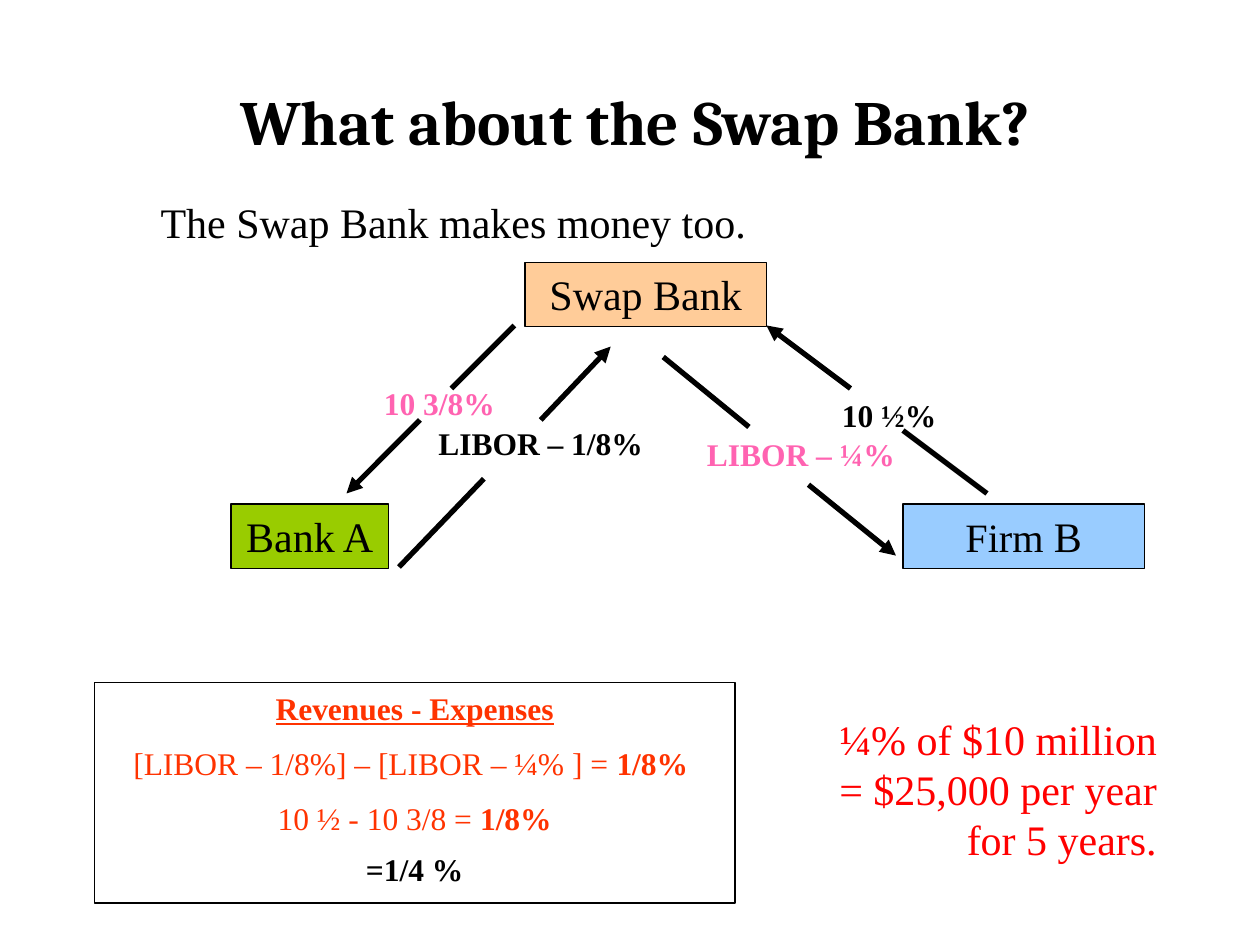
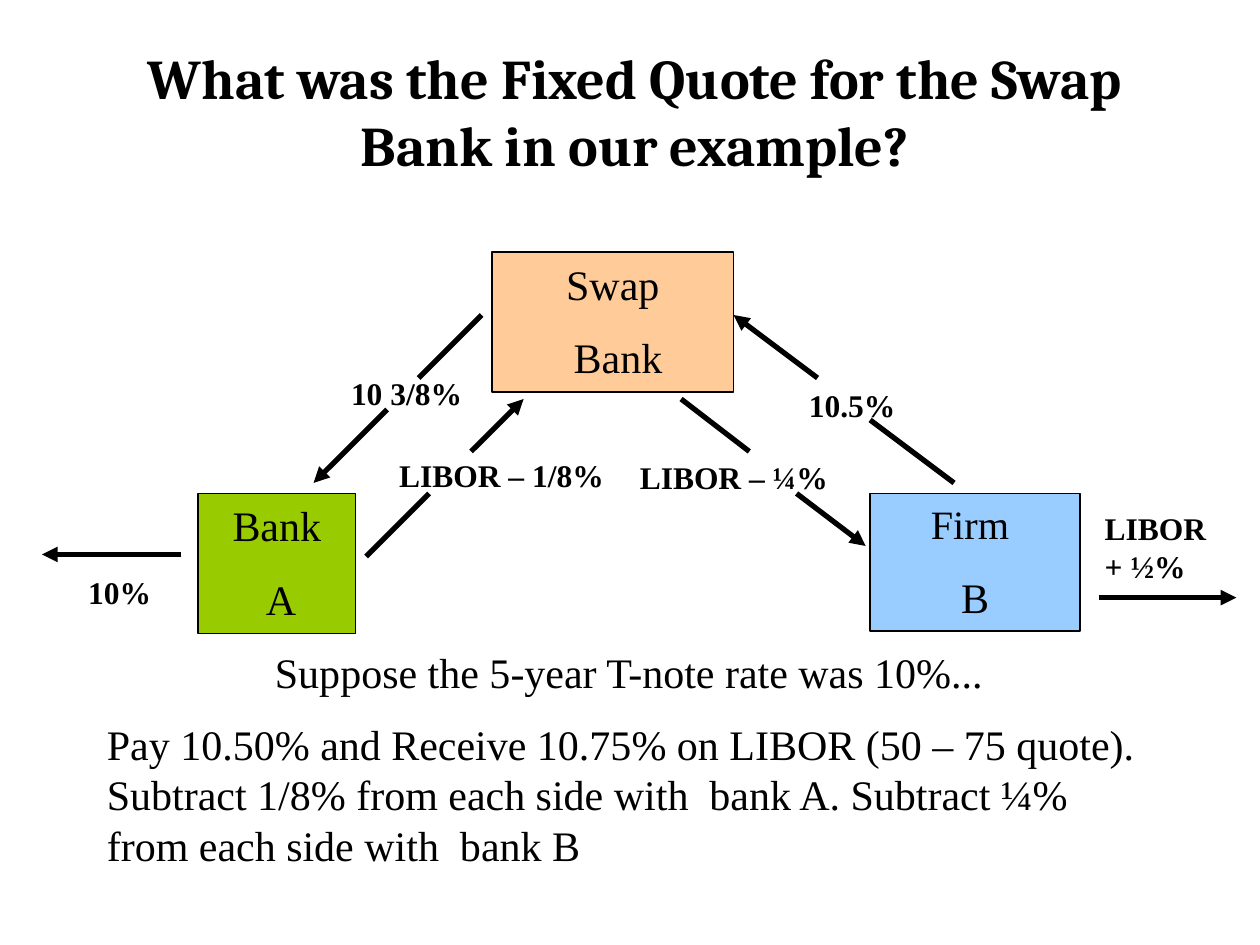
import pptx
import pptx.util
import pptx.dml.color
import pptx.enum.shapes
import pptx.enum.text
import pptx.oxml.ns
from lxml import etree
from dataclasses import dataclass

Pt = pptx.util.Pt
ALIGN = pptx.enum.text.PP_ALIGN


@dataclass(frozen=True)
class Theme:
    black: str = "000000"
    white: str = "FFFFFF"
    pink: str = "FF63B1"
    red: str = "FF0000"
    orange: str = "FF3300"
    swap_fill: str = "FFCC99"
    firm_fill: str = "99CCFF"
    bank_fill: str = "99CC00"
    title_font: str = "Cambria"
    body_font: str = "Times New Roman"
    body: float = 24
    firm: float = 23
    label: float = 18
    outline: float = 0.75
    arrow: float = 3
    paragraph_gap: float = 0.55  # share of the type size
    label_height: float = 28.8


THEME = Theme()
BOLD, PLAIN = {"bold": True}, {}
FIRM = {"size": THEME.firm}

# Party: left, top and fill; the diagram's origin is added per slide.
PARTIES = {
    "swap": (300, 150, THEME.swap_fill),
    "firm": (516, 288, THEME.firm_fill),
    "bank": (132, 288, THEME.bank_fill),
}

# Flow: label place (left, top, width), alignment, line out, arrow in.
FIXED_FLOWS = {
    "firm pays": ((474, 223, 78), ALIGN.LEFT, (564, 282, 516, 246), (486, 222, 438, 186)),
    "bank receives": ((210, 216, 80), ALIGN.RIGHT, (294, 186, 258, 222), (240, 240, 198, 282)),
}

SLIDES = [
    {
        "title": "What about the Swap Bank?",
        "title_top": 24,
        "title_size": 36,
        "origin": (0, 0),
        "parties": {
            "swap": (["Swap Bank"], 138, 36.7),
            "firm": ([[("Firm ", FIRM), ("B", PLAIN)]], 138, 36.7),
            "bank": (["Bank A"], 90, 36.7),
        },
        "flows": {
            "firm pays": "10 ½%",
            "bank receives": "10 3/8%",
            "firm receives": "LIBOR – ¼%",
            "bank pays": "LIBOR – 1/8%",
        },
        "floating_flows": {
            "firm receives": ((348, 245, 170.6), ALIGN.RIGHT,
                              (379, 204, 428, 244), (462, 277, 512, 317.5)),
            "bank pays": ((243.4, 239, 194.4), ALIGN.LEFT,
                          (228, 324, 276.5, 273.6), (309, 240, 349, 198)),
        },
        "outer_flows": [],
        "texts": [
            ("The Swap Bank makes money too.", (84.7, 108.7, 413, 36), {}),
            ("¼% of $10 million = $25,000 per year for 5 years.",
             (456.5, 404, 211.7, 94), {"align": ALIGN.RIGHT, "color": THEME.red}),
            ([[("Revenues - Expenses", {"bold": True, "underline": True})],
              [("[LIBOR – 1/8%] – [LIBOR – ¼% ] = ", PLAIN), ("1/8% ", BOLD)],
              [("10 ½ - 10 3/8 = ", PLAIN), ("1/8%", BOLD)],
              [("=1/4 %", {"bold": True, "color": THEME.black, "spacing": 0.9})]],
             (54, 390, 366, 126),
             {"align": ALIGN.CENTER, "color": THEME.orange, "size": THEME.label,
              "line": THEME.black}),
        ],
    },
    {
        "title": "What was the Fixed Quote for the Swap Bank in our example?",
        "title_top": 18,
        "title_size": 32,
        "origin": (-18.8, -6),
        "parties": {
            "swap": (["Swap", " Bank"], 138, 80),
            "firm": ([[("Firm ", FIRM)], "B"], 120, 78.7),
            "bank": (["Bank", " A"], 90, 80),
        },
        "flows": {
            "firm pays": "10.5%",
            "bank receives": "10 3/8%",
            "firm receives": "LIBOR – ¼%",
            "bank pays": "LIBOR – 1/8%",
        },
        "floating_flows": {
            "firm receives": ((372.3, 264, 126.7), ALIGN.RIGHT,
                              (408, 234, 447, 264), (474, 288, 513.5, 318)),
            "bank pays": ((239.8, 263, 144.7), ALIGN.LEFT,
                          (228, 324, 264, 288), (288, 264, 318, 234)),
        },
        "outer_flows": [(103.7, 316.8, 24, 316.8), (628, 341.5, 706.5, 341.5)],
        "texts": [
            ("10%", (41.8, 324, 53.3, 28.8),
             {"align": ALIGN.CENTER, "size": THEME.label, "bold": True,
              "fill": THEME.white}),
            ("LIBOR + ½%", (624.2, 287.3, 73.4, 50.4),
             {"size": THEME.label, "bold": True}),
            ("Suppose the 5-year T-note rate was 10%...", (150, 366, 456, 36), {}),
            ("Pay 10.50% and Receive 10.75% on LIBOR (50 – 75 quote). "
             "Subtract 1/8% from each side with  bank A. "
             "Subtract ¼% from each side with  bank B", (54, 407, 606, 94), {}),
        ],
    },
]


def rgb(color):
    return pptx.dml.color.RGBColor.from_string(color)


def write_text(box, content, *, size=THEME.body, color=THEME.black, bold=False,
               font=THEME.body_font, align=ALIGN.LEFT,
               anchor=pptx.enum.text.MSO_ANCHOR.TOP):
    """Fill a shape with one text, or a list of paragraphs made of texts or spans."""
    frame = box.text_frame
    frame.word_wrap = True
    frame.auto_size = pptx.enum.text.MSO_AUTO_SIZE.NONE
    frame.vertical_anchor = anchor
    frame.margin_left = frame.margin_right = Pt(7.2)
    frame.margin_top = frame.margin_bottom = Pt(3.6)
    for index, spans in enumerate([content] if isinstance(content, str) else content):
        para = frame.paragraphs[0] if index == 0 else frame.add_paragraph()
        para.alignment = align
        para.space_before = Pt(size * THEME.paragraph_gap if index else 0)
        for text, own in [(spans, PLAIN)] if isinstance(spans, str) else spans:
            span = para.add_run()
            span.text = text
            span.font.name = font
            span.font.size = Pt(own.get("size", size))
            span.font.bold = own.get("bold", bold)
            span.font.underline = own.get("underline", False)
            span.font.color.rgb = rgb(own.get("color", color))
            if "spacing" in own:
                para.line_spacing = own["spacing"]


def add_text(page, content, place, fill=None, line=None, **text_format):
    """Add a text box, or a rectangle when a fill or an outline is given."""
    place = [Pt(length) for length in place]
    if fill or line:
        box = page.shapes.add_shape(pptx.enum.shapes.MSO_SHAPE.RECTANGLE, *place)
        box.shadow.inherit = False
        if fill:
            box.fill.solid()
            box.fill.fore_color.rgb = rgb(fill)
        else:
            box.fill.background()
        if line:
            box.line.color.rgb = rgb(line)
            box.line.width = Pt(THEME.outline)
        else:
            box.line.fill.background()
    else:
        box = page.shapes.add_textbox(*place)
    write_text(box, content, **text_format)


def add_line(page, ends, arrow=False):
    connector = page.shapes.add_connector(
        pptx.enum.shapes.MSO_CONNECTOR.STRAIGHT, *[Pt(length) for length in ends])
    connector.line.color.rgb = rgb(THEME.black)
    connector.line.width = Pt(THEME.arrow)
    if arrow:
        etree.SubElement(connector.line._get_or_add_ln(),
                         pptx.oxml.ns.qn("a:tailEnd"), type="triangle")
    etree.SubElement(connector._element.spPr, pptx.oxml.ns.qn("a:effectLst"))


def add_title(page, text, top, size):
    title = page.shapes.title
    title.left, title.top, title.width, title.height = Pt(48), Pt(top), Pt(630), Pt(90)
    write_text(title, text, size=size, bold=True, font=THEME.title_font,
               align=ALIGN.CENTER, anchor=pptx.enum.text.MSO_ANCHOR.MIDDLE)


def add_diagram(page, slide):
    across, down = slide["origin"]

    def moved(ends):
        return [length + shift for length, shift in zip(ends, (across, down) * 2)]

    for party, (content, width, height) in slide["parties"].items():
        left, top, fill = PARTIES[party]
        add_text(page, content, (left + across, top + down, width, height),
                 fill=fill, line=THEME.black, align=ALIGN.CENTER)
    flows = FIXED_FLOWS | slide["floating_flows"]
    pink_flows = ("firm receives", "bank receives") if slide is SLIDES[0] else ()
    for flow, label in slide["flows"].items():
        (left, top, width), align, line_out, arrow_in = flows[flow]
        add_line(page, moved(line_out))
        add_line(page, moved(arrow_in), arrow=True)
        add_text(page, label, (left + across, top + down, width, THEME.label_height),
                 size=THEME.label, bold=True, align=align,
                 color=THEME.pink if flow in pink_flows else THEME.black)
    for ends in slide["outer_flows"]:
        add_line(page, ends, arrow=True)


def main():
    deck = pptx.Presentation()
    deck.slide_width, deck.slide_height = Pt(720), Pt(540)
    title_only = deck.slide_layouts.get_by_name("Title Only")
    for slide in SLIDES:
        page = deck.slides.add_slide(title_only)
        add_title(page, slide["title"], slide["title_top"], slide["title_size"])
        add_diagram(page, slide)
        for content, place, text_format in slide["texts"]:
            add_text(page, content, place, **text_format)
    deck.save("out.pptx")


if __name__ == "__main__":
    main()
